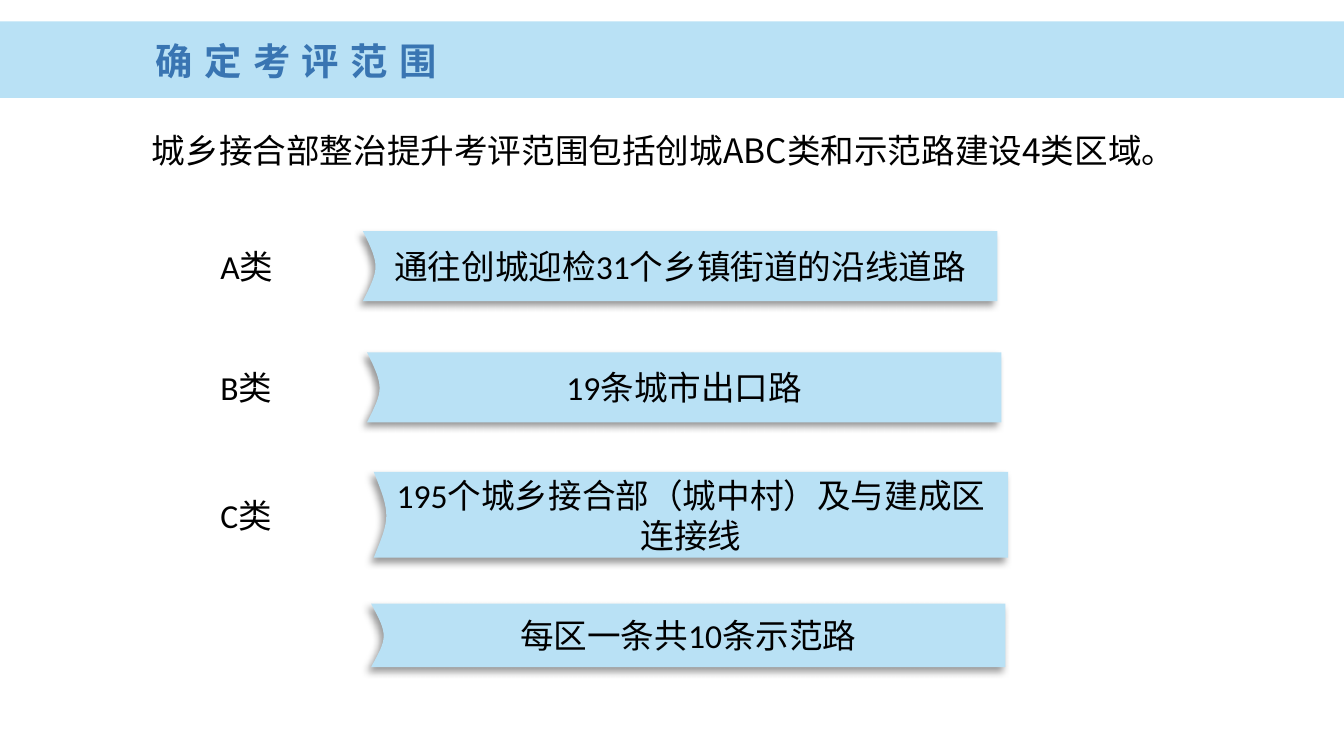
"""Build the slide that defines the assessment scope."""
from lxml import etree
from pptx import Presentation
from pptx import util as u
from pptx.dml.color import RGBColor
from pptx.enum import shapes, text
from pptx.oxml import ns

COLOURS = {"sky": "B9E1F5", "blue": "3975B2", "black": "000000", "white": "FFFFFF"}
CJK = "Noto Sans CJK SC"
LATIN = "Calibri"
RIBBON_WIDTH = 339.84
LABEL_LEFT, LABEL_WIDTH, LABEL_HEIGHT = 111, 43.2, 28.8
RIBBONS = [
    ("A类", "通往创城迎检31个乡镇街道的沿线道路", 194.4, 123.8, 37.6),
    ("B类", "19条城市出口路", 196.6, 188.8, 37.6),
    ("C类", "195个城乡接合部（城中村）及与建成区连接线", 200.2, 252.8, 46),
    (None, "每区一条共10条示范路", 198.8, 323.4, 34),
]


class SlideStyle:
    """Hold the style and the current slide."""

    def __init__(self, page):
        self.page = page
        page.background.fill.solid()
        page.background.fill.fore_color.rgb = self.colour("white")

    def colour(self, name):
        return RGBColor.from_string(COLOURS[name])

    def place(self, box, left, top, width, height):
        box.left, box.top = u.Pt(left), u.Pt(top)
        box.width, box.height = u.Pt(width), u.Pt(height)

    def paint(self, shape):
        shape.shadow.inherit = False
        shape.fill.solid()
        shape.fill.fore_color.rgb = self.colour("sky")
        shape.line.fill.background()

    def set_words(self, box, words, font=LATIN, size=18, colour="black", bold=False,
                  align=text.PP_ALIGN.LEFT, anchor=text.MSO_ANCHOR.TOP, spacing=0):
        frame = box.text_frame
        frame.text = words
        frame.word_wrap = True
        frame.auto_size = text.MSO_AUTO_SIZE.NONE
        frame.vertical_anchor = anchor
        para = frame.paragraphs[0]
        para.alignment = align
        para.space_before = u.Pt(0)
        span = para.runs[0]
        span.font.size, span.font.bold = u.Pt(size), bold
        span.font.color.rgb = self.colour(colour)
        span.font.name = font
        properties = span.font._element
        etree.SubElement(properties, ns.qn("a:ea"), typeface=CJK)
        if spacing:
            properties.set("spc", str(spacing * 100))

    def title(self, words, *area):
        box = self.page.shapes.title
        self.place(box, *area)
        self.set_words(box, words, CJK, 20, "blue", True, spacing=6)

    def body(self, words, *area):
        box = self.page.placeholders[1]
        self.place(box, *area)
        self.set_words(box, words, CJK)
        properties = box.text_frame.paragraphs[0]._p.get_or_add_pPr()
        properties.set("marL", "0")
        properties.set("indent", "0")
        etree.SubElement(properties, ns.qn("a:buNone"))

    def band(self, *area):
        shape = self.page.shapes.add_shape(
            shapes.MSO_SHAPE.RECTANGLE, *map(u.Pt, area))
        self.paint(shape)
        self.page.shapes._spTree.insert(2, shape._element)

    def label(self, words, *area):
        box = self.page.shapes.add_textbox(*map(u.Pt, area))
        self.set_words(box, words)

    def ribbon(self, words, left, top, width, height, steps=16):
        corners = [(width, 0), (width, height), (0, height)]
        curve = []
        for step in range(1, steps):
            t = step / steps
            first, second = 3 * t * (1 - t) ** 2, 3 * t ** 2 * (1 - t)
            curve.append((8.64 * first + 9.36 * second,
                          height * ((1 - t) ** 3 + 0.54 * first + 0.5 * second)))
        outline = self.page.shapes.build_freeform(u.Pt(left), u.Pt(top))
        outline.add_line_segments(
            [(u.Pt(left + x), u.Pt(top + y)) for x, y in corners + curve])
        shape = outline.convert_to_shape()
        self.paint(shape)
        self.cast_shadow(shape)
        frame = shape.text_frame
        frame.margin_left = frame.margin_right = u.Pt(5)
        frame.margin_top = frame.margin_bottom = u.Pt(2.9)
        self.set_words(shape, words, align=text.PP_ALIGN.CENTER,
                       anchor=text.MSO_ANCHOR.MIDDLE)

    def cast_shadow(self, shape):
        effects = shape._element.spPr.find(ns.qn("a:effectLst"))
        shadow = etree.SubElement(
            effects, ns.qn("a:outerShdw"), blurRad=str(u.Pt(4)),
            dist=str(u.Pt(3)), dir=str(135 * 60000), algn="tr", rotWithShape="0")
        tint = etree.SubElement(shadow, ns.qn("a:srgbClr"), val=COLOURS["black"])
        etree.SubElement(tint, ns.qn("a:alpha"), val="40000")


def main():
    deck = Presentation()
    deck.slide_width, deck.slide_height = u.Pt(720), u.Pt(405)
    style = SlideStyle(deck.slides.add_slide(deck.slide_layouts[1]))
    style.band(0, 11.5, 720, 41)
    style.title("确定考评范围", 76.3, 16.6, 172, 31.7)
    style.body("城乡接合部整治提升考评范围包括创城ABC类和示范路建设4类区域。",
               74.2, 66.2, 548.6, 28.8)
    for name, words, left, top, height in RIBBONS:
        style.ribbon(words, left, top, RIBBON_WIDTH, height)
        if name:
            style.label(name, LABEL_LEFT, top + (height - LABEL_HEIGHT) / 2,
                        LABEL_WIDTH, LABEL_HEIGHT)
    deck.save("out.pptx")


if __name__ == "__main__":
    main()
